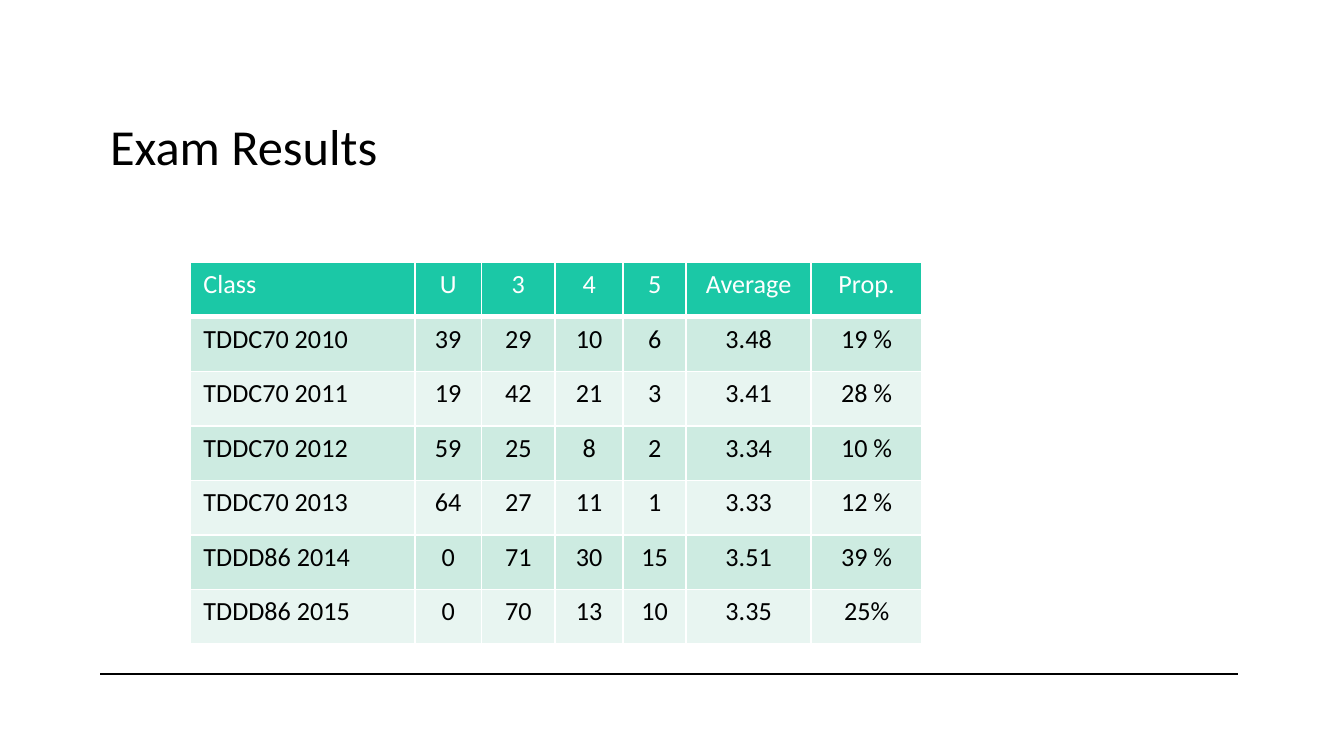
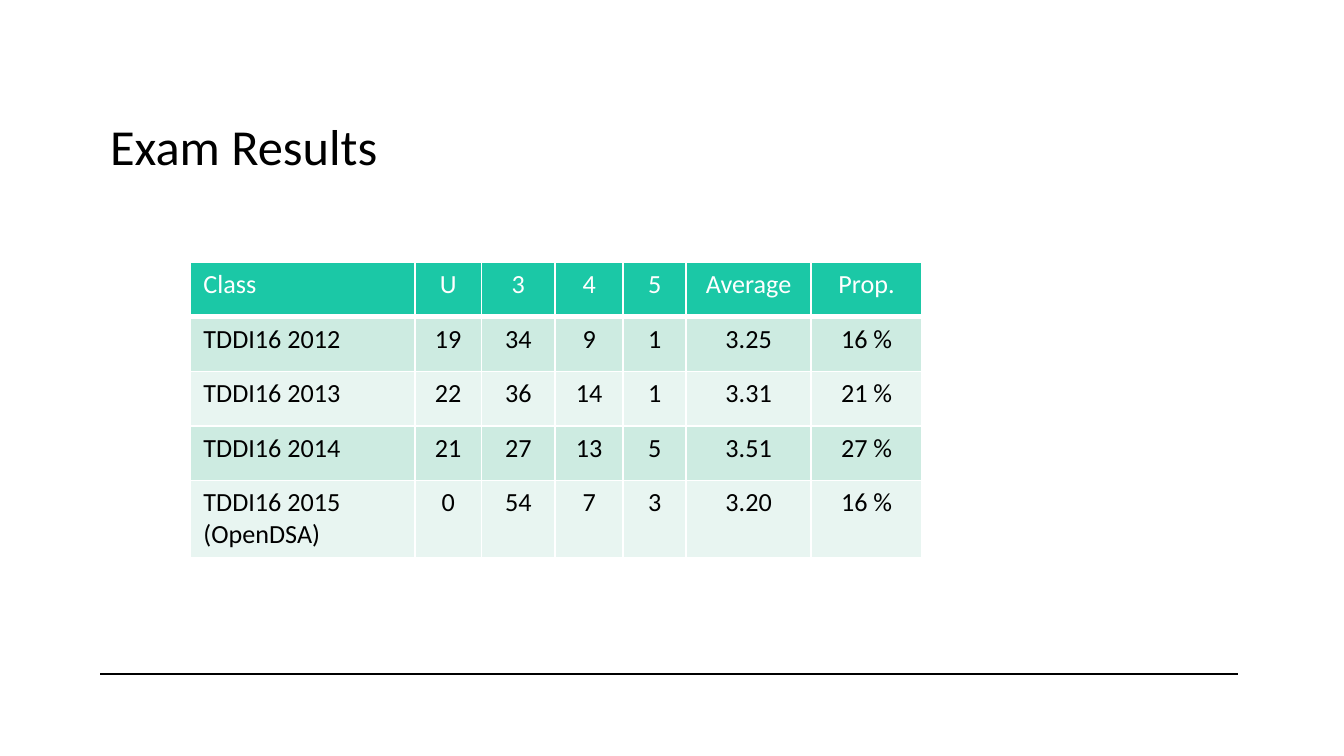
from lxml import etree
from pptx import Presentation
from pptx.dml.color import RGBColor
from pptx.enum import shapes, text
from pptx.oxml import ns
from pptx.util import Cm, Pt

FONT = "Calibri"
BLACK, WHITE = "000000", "FFFFFF"
HEADER_FILL = "1BC8A6"
BAND_FILLS = ("E8F5F1", "CDEBE1")
COLUMNS = ("Class", "U", "3", "4", "5", "Average", "Prop.")
COLUMN_WIDTHS = (4.25, 1.26, 1.39, 1.29, 1.19, 2.36, 2.1)
ROW_HEIGHT = 1.03

FIRST_COURSES = (
    ("TDDC70 2010", "39", "29", "10", "6", "3.48", "19 %"),
    ("TDDC70 2011", "19", "42", "21", "3", "3.41", "28 %"),
    ("TDDC70 2012", "59", "25", "8", "2", "3.34", "10 %"),
    ("TDDC70 2013", "64", "27", "11", "1", "3.33", "12 %"),
    ("TDDD86 2014", "0", "71", "30", "15", "3.51", "39 %"),
    ("TDDD86 2015", "0", "70", "13", "10", "3.35", "25%"),
)
SECOND_COURSE = (
    ("TDDI16 2012", "19", "34", "9", "1", "3.25", "16 %"),
    ("TDDI16 2013", "22", "36", "14", "1", "3.31", "21 %"),
    ("TDDI16 2014", "21", "27", "13", "5", "3.51", "27 %"),
    ("TDDI16 2015\v(OpenDSA)", "0", "54", "7", "3", "3.20", "16 %"),
)


def rgb(color):
    return RGBColor.from_string(color)


def style_font(p, size, color):
    p.font.name = FONT
    p.font.size = Pt(size)
    p.font.bold = False
    p.font.color.rgb = rgb(color)


def add_title(s, title):
    sp = s.shapes.title
    sp.left, sp.top, sp.width, sp.height = Cm(1.9), Cm(2.08), Cm(21.5), Cm(1.73)
    tf = sp.text_frame
    tf.text = title
    tf.word_wrap = True
    tf.auto_size = text.MSO_AUTO_SIZE.NONE
    tf.vertical_anchor = text.MSO_ANCHOR.TOP
    tf.margin_left = tf.margin_right = Cm(0.18)
    tf.margin_top = tf.margin_bottom = Cm(0.1)
    p = tf.paragraphs[0]
    p.alignment = text.PP_ALIGN.LEFT
    style_font(p, 27, BLACK)


def add_footer_line(s):
    line = s.shapes.add_connector(
        shapes.MSO_CONNECTOR.STRAIGHT, Cm(1.89), Cm(12.74), Cm(23.4), Cm(12.74))
    line.line.color.rgb = rgb(BLACK)
    line.line.width = Pt(0.75)
    etree.SubElement(line.element.spPr, ns.qn("a:effectLst"))


def set_borders(cell, bottom):
    tc_pr = cell._tc.get_or_add_tcPr()
    for side, width in (("L", 1), ("R", 1), ("T", 1), ("B", bottom)):
        ln = etree.SubElement(tc_pr, ns.qn(f"a:ln{side}"), w=str(Pt(width)))
        fill = etree.SubElement(ln, ns.qn("a:solidFill"))
        etree.SubElement(fill, ns.qn("a:srgbClr"), val=WHITE)


def fill_cell(cell, value, column, row):
    header = row == 0
    set_borders(cell, 3 if header else 1)
    cell.fill.solid()
    cell.fill.fore_color.rgb = rgb(HEADER_FILL if header else BAND_FILLS[row % 2])
    cell.text_frame.text = value
    p = cell.text_frame.paragraphs[0]
    p.alignment = text.PP_ALIGN.CENTER if column else text.PP_ALIGN.LEFT
    style_font(p, 14, WHITE if header else BLACK)


def add_results_table(s, results):
    rows = (COLUMNS, *results)
    table = s.shapes.add_table(
        len(rows), len(COLUMNS), Cm(3.59), Cm(4.96),
        Cm(sum(COLUMN_WIDTHS)), Cm(ROW_HEIGHT * len(rows))).table
    for column, width in zip(table.columns, COLUMN_WIDTHS):
        column.width = Cm(width)
    for r, values in enumerate(rows):
        table.rows[r].height = Cm(ROW_HEIGHT)
        for c, value in enumerate(values):
            fill_cell(table.cell(r, c), value, c, r)


def add_results_slide(prs, results):
    s = prs.slides.add_slide(prs.slide_layouts[5])
    add_footer_line(s)
    add_title(s, "Exam Results")
    add_results_table(s, results)


def main():
    prs = Presentation()
    prs.slide_width, prs.slide_height = Cm(25.4), Cm(14.29)
    for results in (FIRST_COURSES, SECOND_COURSE):
        add_results_slide(prs, results)
    prs.save("out.pptx")


if __name__ == "__main__":
    main()
